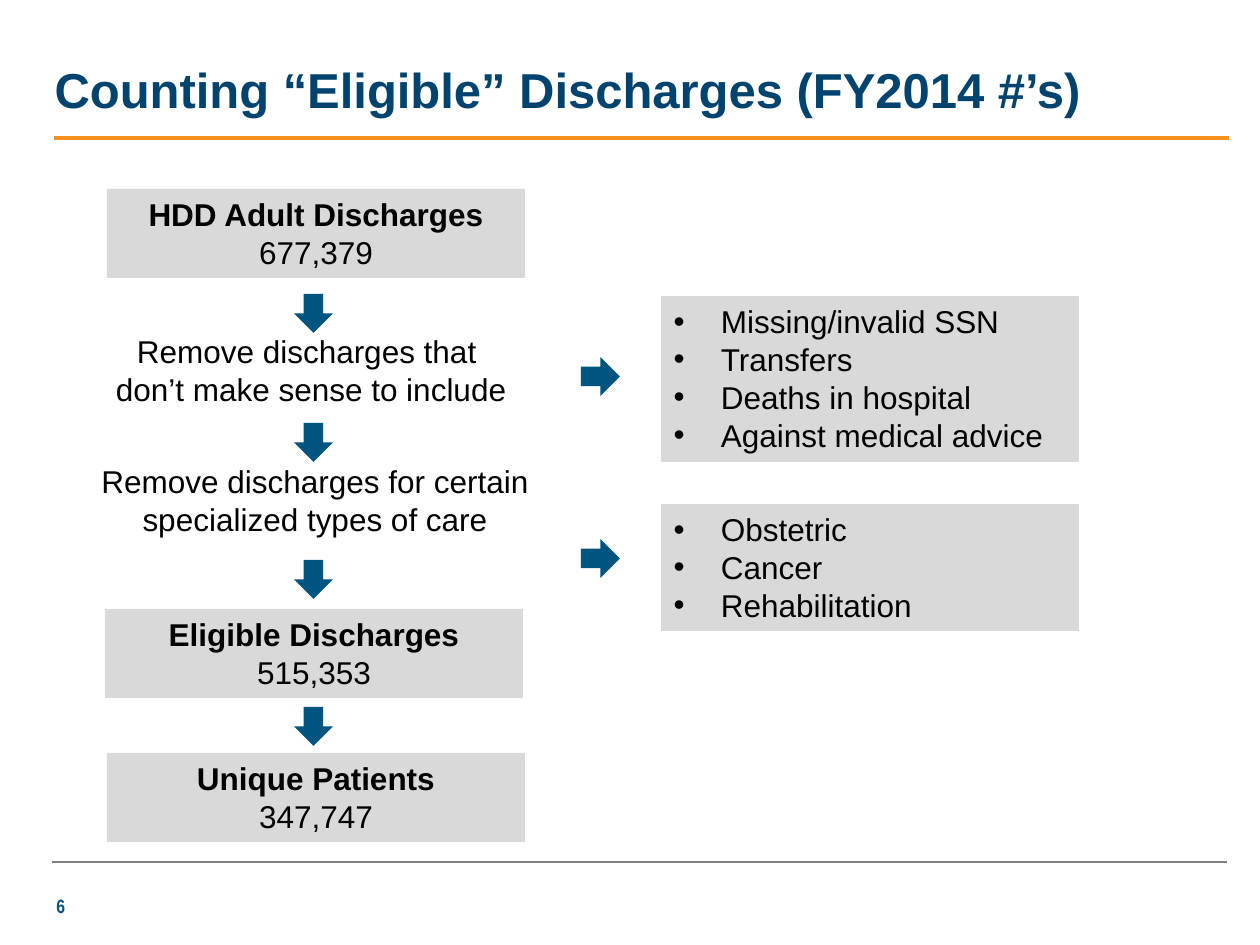
"""Build the slide that counts eligible discharges."""
from dataclasses import dataclass

from lxml import etree
from pptx import Presentation
from pptx import util as u
from pptx.dml.color import RGBColor
from pptx.enum import shapes, text
from pptx.oxml.ns import qn

SCALE = 914400 / 126


@dataclass(frozen=True)
class Theme:
    navy: str = "00436E"
    blue: str = "005480"
    gold: str = "F7921E"
    gray: str = "808080"
    pale: str = "D9D9D9"
    ink: str = "000000"
    face: str = "Arial"
    thin: str = "Arial Narrow"
    head: int = 28
    body: int = 18
    note: int = 11


@dataclass(frozen=True)
class Box:
    x: int
    y: int
    w: int
    h: int

    def emu(self) -> list[int]:
        return [px(n) for n in (self.x, self.y, self.w, self.h)]


@dataclass(frozen=True)
class Count:
    box: Box
    label: str
    total: str


@dataclass(frozen=True)
class Step:
    box: Box
    words: str


@dataclass(frozen=True)
class Group:
    box: Box
    items: tuple[str, ...]


@dataclass(frozen=True)
class Rule:
    x: int
    y: int
    w: int
    color: str
    width: float


T = Theme()
ARROW = 39
COUNTS = (
    Count(Box(107, 189, 418, 89), "HDD Adult Discharges", "677,379"),
    Count(Box(105, 609, 418, 89), "Eligible Discharges", "515,353"),
    Count(Box(107, 753, 418, 89), "Unique Patients", "347,747"),
)
STEPS = (
    Step(Box(86, 326, 450, 89), "Remove discharges that \vdon’t make sense to include"),
    Step(Box(84, 456, 462, 89), "Remove discharges for certain specialized types of care"),
)
GROUPS = (
    Group(Box(661, 296, 418, 166), ("Missing/invalid SSN", "Transfers",
                                    "Deaths in hospital", "Against medical advice")),
    Group(Box(661, 504, 418, 127), ("Obstetric", "Cancer", "Rehabilitation")),
)
RULES = (Rule(54, 138, 1175, T.gold, 2.25), Rule(52, 862, 1175, T.gray, 0.75))
DOWNS = (294, 423, 560, 707)
RIGHTS = (357, 539)


def px(n: int) -> int:
    """Turn pixels into EMU."""
    return round(n * SCALE)


def write(frame, words: str, *, size: int = T.body, color: str = T.ink,
          face: str = T.face, bold: bool = False, lead: bool = False,
          align=text.PP_ALIGN.LEFT) -> None:
    """Fill a frame with one paragraph per line; lead makes the first bold."""
    frame.word_wrap = True
    frame.auto_size = text.MSO_AUTO_SIZE.NONE
    frame.vertical_anchor = text.MSO_ANCHOR.TOP
    frame.text = words
    for i, par in enumerate(frame.paragraphs):
        par.alignment = align
        par.space_before = u.Pt(0)
        for run in par.runs:
            font = run.font
            font.name, font.size = face, u.Pt(size)
            font.bold = bold or (lead and i == 0)
            font.color.rgb = RGBColor.from_string(color)


def paint(shape, color: str) -> None:
    """Give a shape a flat fill without an outline."""
    shape.fill.solid()
    shape.fill.fore_color.rgb = RGBColor.from_string(color)
    shape.line.fill.background()


def place(shape, box: Box) -> None:
    """Move a placeholder to a box."""
    shape.left, shape.top, shape.width, shape.height = box.emu()


def draw_shape(slide, kind, box: Box, color: str):
    """Add a flat preset shape."""
    shape = slide.shapes.add_shape(kind, *box.emu())
    shape.shadow.inherit = False
    paint(shape, color)
    return shape


def draw_count(slide, count: Count) -> None:
    """Add a shaded box with a bold label over its total."""
    shape = draw_shape(slide, shapes.MSO_SHAPE.RECTANGLE, count.box, T.pale)
    write(shape.text_frame, f"{count.label}\n{count.total}", lead=True,
          align=text.PP_ALIGN.CENTER)


def draw_text(slide, box: Box, words: str, **form) -> None:
    """Add a text box."""
    write(slide.shapes.add_textbox(*box.emu()).text_frame, words, **form)


def draw_group(holder, group: Group) -> None:
    """Turn a body placeholder into a shaded bullet list."""
    place(holder, group.box)
    paint(holder, T.pale)
    write(holder.text_frame, "\n".join(group.items))


def draw_rule(slide, rule: Rule) -> None:
    """Add a level line."""
    y = px(rule.y)
    line = slide.shapes.add_connector(shapes.MSO_CONNECTOR.STRAIGHT, px(rule.x), y,
                                      px(rule.x + rule.w), y)
    line.line.color.rgb = RGBColor.from_string(rule.color)
    line.line.width = u.Pt(rule.width)
    etree.SubElement(line._element.spPr, qn("a:effectLst"))


def main() -> None:
    """Build and save the slide."""
    deck = Presentation()
    deck.slide_width, deck.slide_height = u.Inches(10), u.Inches(7.5)
    slide = deck.slides.add_slide(deck.slide_layouts.get_by_name("Two Content"))
    title, *lists = slide.placeholders
    place(title, Box(42, 53, 1134, 131))
    write(title.text_frame, "Counting “Eligible” Discharges (FY2014 #’s)",
          size=T.head, color=T.navy, bold=True)
    for holder, group in zip(lists, GROUPS):
        draw_group(holder, group)
    for count in COUNTS:
        draw_count(slide, count)
    for step in STEPS:
        draw_text(slide, step.box, step.words, align=text.PP_ALIGN.CENTER)
    for y in DOWNS:
        draw_shape(slide, shapes.MSO_SHAPE.DOWN_ARROW, Box(294, y, ARROW, ARROW), T.blue)
    for y in RIGHTS:
        draw_shape(slide, shapes.MSO_SHAPE.RIGHT_ARROW, Box(581, y, ARROW, ARROW), T.blue)
    for rule in RULES:
        draw_rule(slide, rule)
    draw_text(slide, Box(44, 888, 1081, 37), "6", size=T.note, color=T.blue,
              face=T.thin, bold=True)
    deck.save("out.pptx")


if __name__ == "__main__":
    main()
